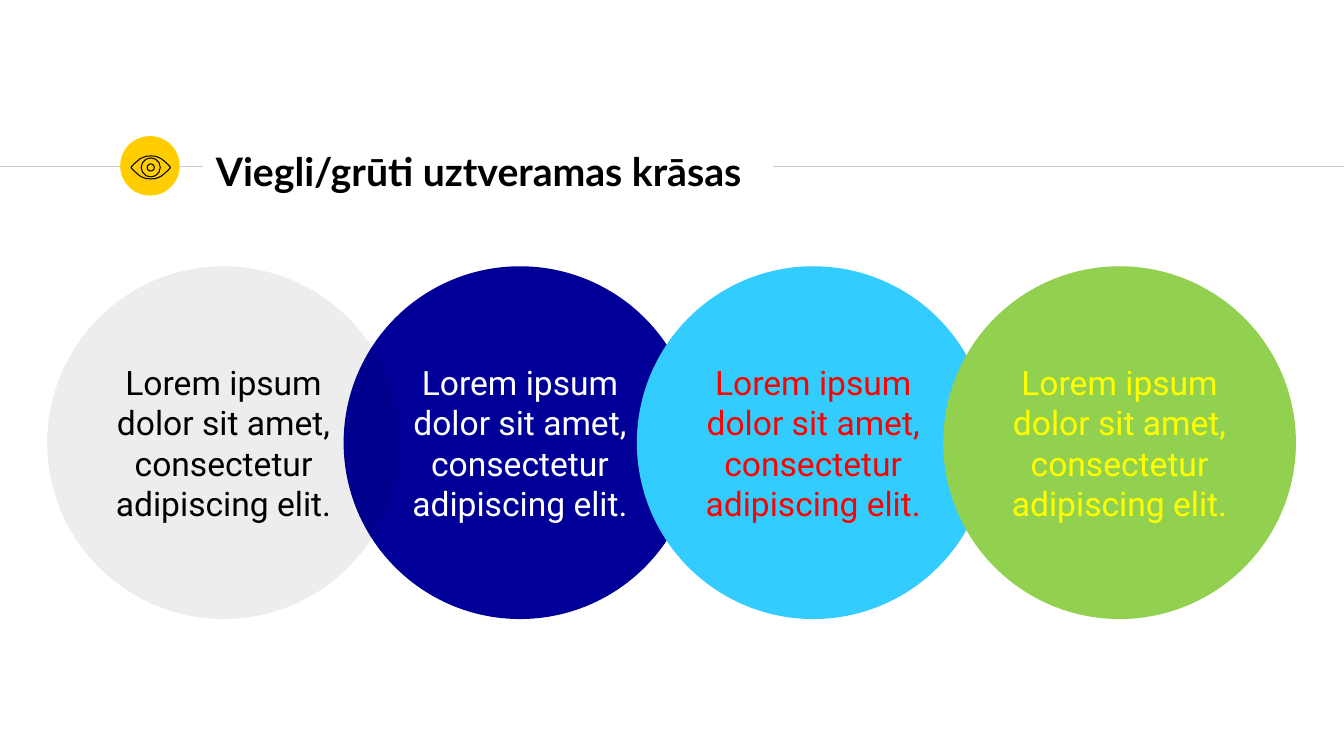
from dataclasses import dataclass

from lxml.etree import SubElement
from pptx import Presentation
from pptx.dml.color import RGBColor
from pptx.enum.shapes import MSO_CONNECTOR, MSO_SHAPE
from pptx.enum.text import MSO_ANCHOR, MSO_AUTO_SIZE, PP_ALIGN
from pptx.oxml.ns import qn
from pptx.util import Cm, Pt

TITLE = "Viegli/grūti uztveramas krāsas"
SAMPLE = "Lorem ipsum dolor sit amet, consectetur adipiscing elit."

# Left edge (cm), fill, text colour, opacity in percent; back to front
CIRCLES = [
    (8.66, "000099", "FFFFFF", 100),
    (1.19, "000000", "000000", 7),
    (16.05, "33CCFF", "FF0000", 100),
    (23.77, "92D050", "FFFF00", 100),
]


@dataclass(frozen=True)
class Theme:
    ink: str = "000000"
    rule: str = "CCCCCC"
    badge: str = "FFCD00"
    title_font: str = "Lato"
    body_font: str = "Roboto"
    title_size: int = 28
    body_size: int = 24
    line_width: float = 0.75


THEME = Theme()

# Geometry in cm
SLIDE_WIDTH, SLIDE_HEIGHT = 33.87, 19.05
RULE_Y = 4.19
TITLE_LEFT, TITLE_TOP, TITLE_WIDTH, TITLE_HEIGHT = 5.11, 3.48, 14.38, 1.63
RULES = [(0, TITLE_LEFT), (TITLE_LEFT + TITLE_WIDTH, SLIDE_WIDTH)]
BADGE_CENTER, BADGE_DIAMETER = (3.78, 4.18), 1.5
CIRCLE_TOP, CIRCLE_DIAMETER = 6.71, 8.89
INSET = 0.33
EYE_CENTER = (3.8, 4.22)
EYE_RINGS = [0.18, 0.48]
# Quarter of the eyelid outline, from the top to the right corner
EYE_QUARTER = [(0, 0.29), (0.12, 0.28), (0.2, 0.25), (0.28, 0.21),
               (0.35, 0.15), (0.43, 0.08), (0.5, 0)]


def color(value):
    return RGBColor.from_string(value)


def format_text(shape, text, font, size, text_color, align, bold=False):
    frame = shape.text_frame
    frame.text = text
    frame.word_wrap = True
    frame.auto_size = MSO_AUTO_SIZE.NONE
    frame.vertical_anchor = MSO_ANCHOR.MIDDLE
    frame.margin_left = frame.margin_right = Cm(INSET)
    frame.margin_top = frame.margin_bottom = Cm(INSET)
    paragraph = frame.paragraphs[0]
    paragraph.alignment = align
    run_font = paragraph.runs[0].font
    run_font.name, run_font.size, run_font.bold = font, Pt(size), bold
    run_font.color.rgb = color(text_color)


def add_disc(shapes, left, top, diameter, fill):
    disc = shapes.add_shape(MSO_SHAPE.OVAL, Cm(left), Cm(top), Cm(diameter), Cm(diameter))
    disc.shadow.inherit = False
    disc.fill.solid()
    disc.fill.fore_color.rgb = color(fill)
    disc.line.fill.background()
    return disc


def add_rule(shapes, start, end):
    rule = shapes.add_connector(MSO_CONNECTOR.STRAIGHT, Cm(start), Cm(RULE_Y), Cm(end), Cm(RULE_Y))
    rule.line.color.rgb = color(THEME.rule)
    rule.line.width = Pt(THEME.line_width)
    SubElement(rule._element.spPr, qn("a:effectLst"))


def set_opacity(shape, percent):
    fill_color = shape._element.spPr.find(qn("a:solidFill"))[0]
    SubElement(fill_color, qn("a:alpha"), val=str(percent * 1000))


def outline_only(shape):
    shape.shadow.inherit = False
    shape.fill.background()
    shape.line.color.rgb = color(THEME.ink)
    shape.line.width = Pt(THEME.line_width)


def add_eye(shapes):
    """Draw the eyelids by mirroring one quarter, then the pupil and iris."""
    eye = shapes.add_group_shape().shapes
    center_x, center_y = EYE_CENTER
    upper = [(-x, -y) for x, y in reversed(EYE_QUARTER)] + [(x, -y) for x, y in EYE_QUARTER[1:]]
    lower = [(x, -y) for x, y in reversed(upper[1:-1])]
    points = [(Cm(center_x + x), Cm(center_y + y)) for x, y in upper + lower]
    builder = eye.build_freeform(*points[0])
    builder.add_line_segments(points[1:], close=True)
    outline_only(builder.convert_to_shape())
    for diameter in EYE_RINGS:
        ring = add_disc(eye, center_x - diameter / 2, center_y - diameter / 2, diameter, THEME.ink)
        outline_only(ring)


def main():
    presentation = Presentation()
    presentation.slide_width, presentation.slide_height = Cm(SLIDE_WIDTH), Cm(SLIDE_HEIGHT)
    slide = presentation.slides.add_slide(presentation.slide_layouts[5])
    shapes = slide.shapes

    title = shapes.title
    title.left, title.top = Cm(TITLE_LEFT), Cm(TITLE_TOP)
    title.width, title.height = Cm(TITLE_WIDTH), Cm(TITLE_HEIGHT)
    format_text(title, TITLE, THEME.title_font, THEME.title_size, THEME.ink, PP_ALIGN.LEFT, bold=True)

    for start, end in RULES:
        add_rule(shapes, start, end)
    badge_left, badge_top = (center - BADGE_DIAMETER / 2 for center in BADGE_CENTER)
    add_disc(shapes, badge_left, badge_top, BADGE_DIAMETER, THEME.badge)

    for left, fill, text_color, opacity in CIRCLES:
        circle = add_disc(shapes, left, CIRCLE_TOP, CIRCLE_DIAMETER, fill)
        if opacity < 100:
            set_opacity(circle, opacity)
        format_text(circle, SAMPLE, THEME.body_font, THEME.body_size, text_color, PP_ALIGN.CENTER)

    add_eye(shapes)
    presentation.save("out.pptx")


if __name__ == "__main__":
    main()
